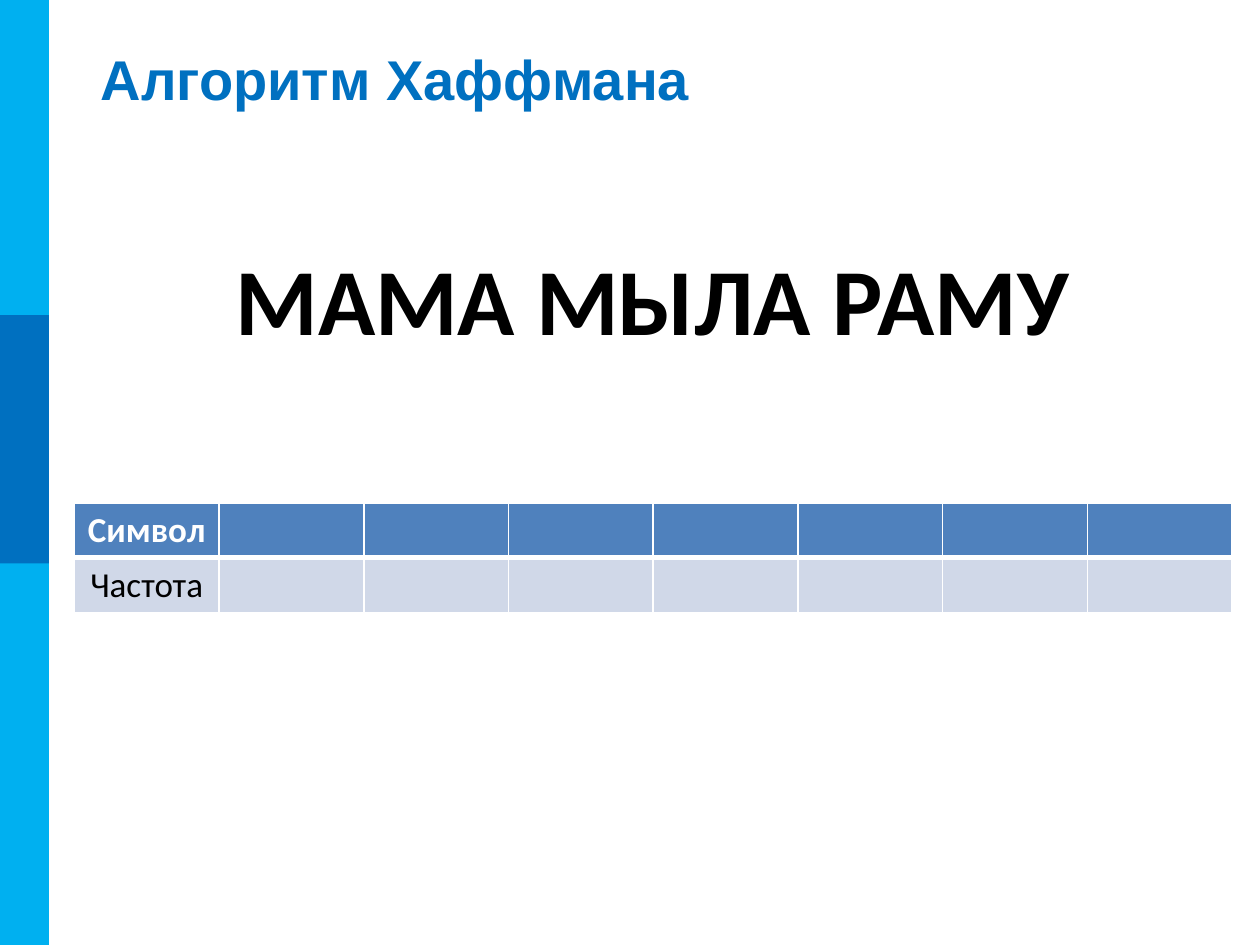
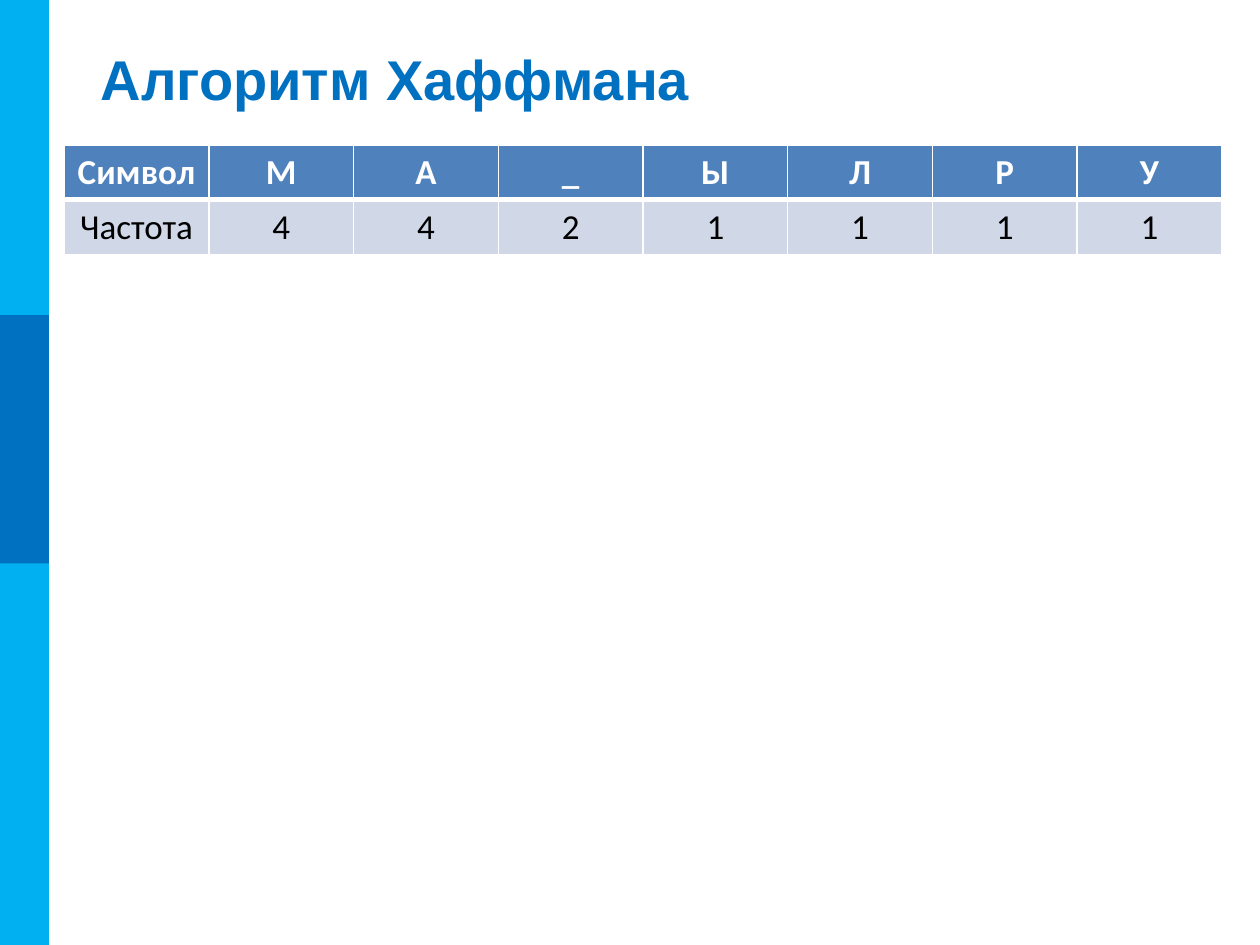
from lxml import etree
from pptx import Presentation
from pptx import util as u
from pptx.dml.color import RGBColor
from pptx.enum import shapes, text
from pptx.oxml.ns import qn

Pt = u.Pt
WHITE, BLACK = "FFFFFF", "000000"
SKY, BLUE = "00B0F0", "0070C0"
HEADER, BODY = "4F81BD", "D0D8E8"
SYMBOLS = "МА_ЫЛРУ"
FREQUENCIES = "4421111"
COL_W, ROW_H = 82.7, 31.3


def rgb(value):
    return RGBColor.from_string(value)


def add_run(p, content, font, size, color, bold):
    r = p.add_run()
    r.text = content
    r.font.name = font
    r.font.size = Pt(size)
    r.font.bold = bold
    r.font.color.rgb = rgb(color)


def add_band(s, top, height, color):
    sp = s.shapes.add_shape(shapes.MSO_SHAPE.RECTANGLE, 0, Pt(top), Pt(28), Pt(height))
    sp.shadow.inherit = False
    sp.fill.solid()
    sp.fill.fore_color.rgb = rgb(color)
    sp.line.fill.background()


def add_text(s, box, content, font, size, color, wrap):
    tf = s.shapes.add_textbox(*map(Pt, box)).text_frame
    tf.word_wrap = wrap
    tf.vertical_anchor = text.MSO_ANCHOR.MIDDLE
    add_run(tf.paragraphs[0], content, font, size, color, True)


def set_borders(cell, widths):
    tc_pr = cell._tc.get_or_add_tcPr()
    for i, (side, width) in enumerate(zip("LRTB", widths)):
        ln = etree.Element(qn(f"a:ln{side}"), w=str(Pt(width)))
        fill = etree.SubElement(ln, qn("a:solidFill"))
        etree.SubElement(fill, qn("a:srgbClr"), val=WHITE)
        tc_pr.insert(i, ln)


def add_frequency_table(s, left, top, symbols, frequencies):
    cols = len(SYMBOLS) + 1
    table = s.shapes.add_table(2, cols, Pt(left), Pt(top),
                               Pt(COL_W * cols), Pt(ROW_H * 2)).table
    for column in table.columns:
        column.width = Pt(COL_W)
    styles = [
        (["Символ", *symbols], HEADER, WHITE, True, (1, 1, 1, 3)),
        (["Частота", *frequencies], BODY, BLACK, False, (1, 1, 3, 1)),
    ]
    for row, (values, fill, color, bold, widths) in zip(table.rows, styles):
        row.height = Pt(ROW_H)
        for cell in row.cells:
            cell.fill.solid()
            cell.fill.fore_color.rgb = rgb(fill)
            set_borders(cell, widths)
        for cell, value in zip(row.cells, values):
            p = cell.text_frame.paragraphs[0]
            p.alignment = text.PP_ALIGN.CENTER
            add_run(p, value, "Calibri", 20, color, bold)


def add_slide(prs):
    s = prs.slides.add_slide(prs.slide_layouts[6])
    add_band(s, 0, 540, SKY)
    add_band(s, 180, 142, BLUE)
    add_text(s, (50.4, 21.6, 649.4, 46), "Алгоритм Хаффмана", "Arial", 32, BLUE, True)
    return s


def main():
    prs = Presentation()
    prs.slide_width, prs.slide_height = Pt(720), Pt(540)

    s = add_slide(prs)
    add_frequency_table(s, 42.5, 287.3, "", "")
    add_text(s, (127.5, 134, 496, 72.7), "МАМА МЫЛА РАМУ", "Calibri", 54, BLACK, False)

    s = add_slide(prs)
    add_frequency_table(s, 36.7, 82.8, SYMBOLS, FREQUENCIES)

    prs.save("out.pptx")


if __name__ == "__main__":
    main()
